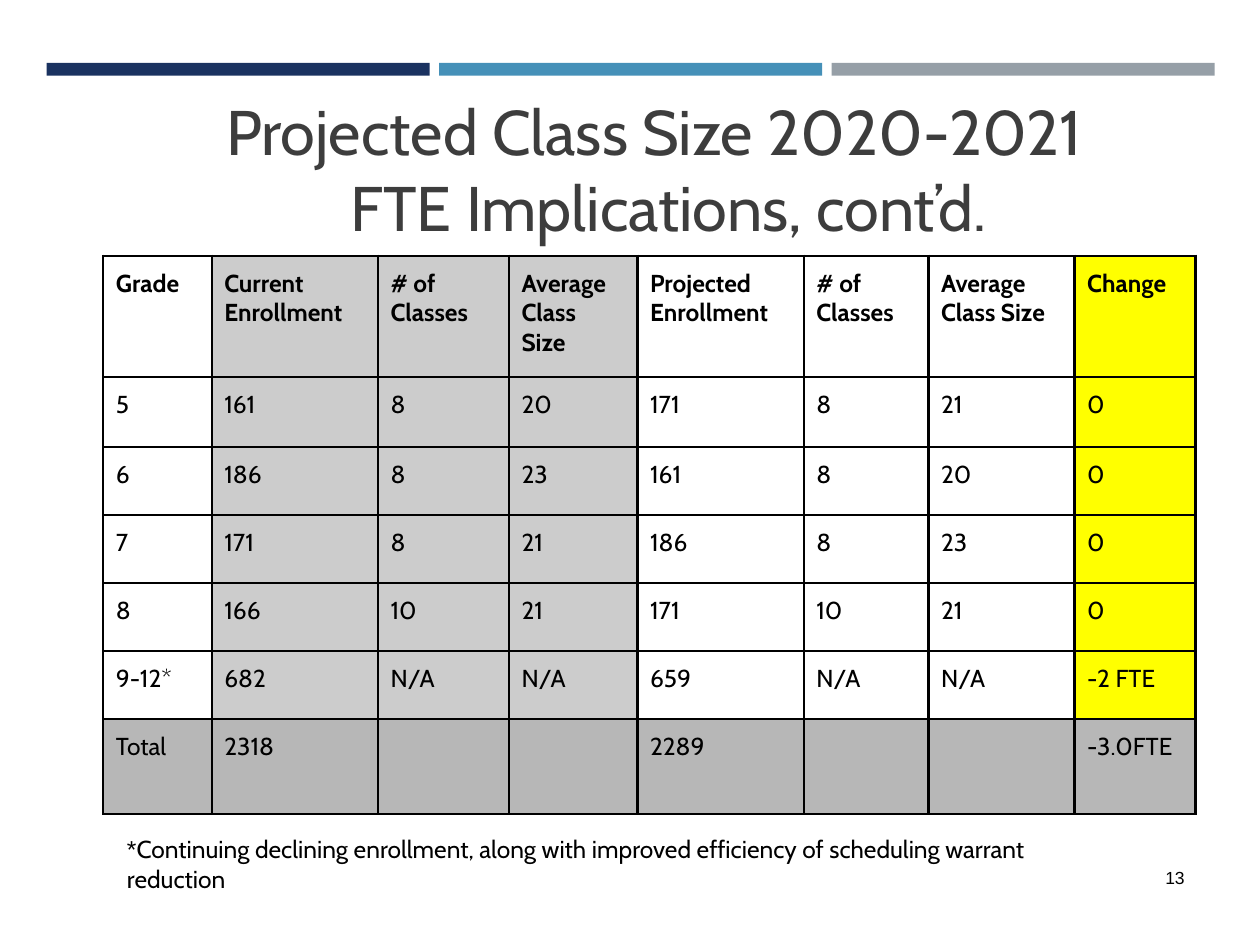
from dataclasses import dataclass
from typing import Optional

from lxml.etree import SubElement
from pptx import Presentation
from pptx.dml.color import RGBColor
from pptx.enum.shapes import MSO_SHAPE as Shape
from pptx.enum.text import MSO_ANCHOR as Anchor, PP_ALIGN as Align
from pptx.oxml.ns import qn
from pptx.util import Inches, Pt

NAVY = RGBColor(0x1A, 0x32, 0x60)
BLUE = RGBColor(0x45, 0x90, 0xB8)
SLATE = RGBColor(0x96, 0x9F, 0xA7)
CHARCOAL = RGBColor(0x3D, 0x3D, 0x3D)
BLACK = RGBColor(0x00, 0x00, 0x00)
LIGHT_GRAY = RGBColor(0xCC, 0xCC, 0xCC)
MID_GRAY = RGBColor(0xB7, 0xB7, 0xB7)
YELLOW = RGBColor(0xFF, 0xFF, 0x00)

SLIDE_WIDTH, SLIDE_HEIGHT = Inches(10), Inches(7.5)
BAR_LEFT, BAR_TOP, BAR_WIDTH, BAR_HEIGHT, BAR_STEP = 0.37, 0.5, 3.04, 0.1, 3.115
TABLE_LEFT, TABLE_TOP = 0.82, 2.03
ROW_HEIGHTS = [0.96, 0.56, 0.54, 0.54, 0.54, 0.54, 0.75]
CELL_MARGIN = Inches(0.1)


@dataclass(frozen=True)
class Column:
    """A table column: its width in inches, body fill and cells from the top."""
    width: float
    fill: Optional[RGBColor]
    cells: tuple[str, ...]


@dataclass(frozen=True)
class TextBlock:
    """A text box; each paragraph is a tuple of (text, font name) runs."""
    left: float
    top: float
    width: float
    height: float
    paragraphs: tuple[tuple[tuple[str, str], ...], ...]
    size: float
    color: RGBColor
    align: Align = Align.LEFT
    anchor: Anchor = Anchor.TOP
    margins: tuple[float, float] = (0.1, 0.1)


COLUMNS = [
    Column(0.86, None, ("Grade", "5", "6", "7", "8", "9-12*", "Total")),
    Column(1.32, LIGHT_GRAY, ("Current Enrollment", "161", "186", "171", "166", "682", "2318")),
    Column(1.04, LIGHT_GRAY, ("# of Classes", "8", "8", "8", "10", "N/A", "")),
    Column(1.02, LIGHT_GRAY, ("Average Class Size", "20", "23", "21", "21", "N/A", "")),
    Column(1.32, None, ("Projected Enrollment", "171", "161", "186", "171", "659", "2289")),
    Column(0.99, None, ("# of Classes", "8", "8", "8", "10", "N/A", "")),
    Column(1.16, None, ("Average Class Size", "21", "20", "23", "21", "N/A", "")),
    Column(0.96, YELLOW, ("Change", "0", "0", "0", "0", "-2 FTE", "-3.0FTE")),
]

TEXT_BLOCKS = [
    TextBlock(1, 0.71, 8.5, 1.25,
              ((("Projected Class Size 2020-2021 ", "Cabin"),),
               ((" FTE Implications, cont’d.", "Cabin"),)),
              36, CHARCOAL, Align.CENTER, Anchor.MIDDLE, (0.07, 0.07)),
    TextBlock(0.91, 6.52, 7.96, 0.54,
              ((("*", "Arial"),
                ("Continuing declining enrollment, along with improved efficiency "
                 "of scheduling warrant reduction", "Cabin")),),
              14, BLACK),
    TextBlock(7.42, 6.83, 2.08, 0.5, ((("13", "Arial"),),),
              10, BLACK, Align.RIGHT, margins=(0.1, 0.05)),
]


def add_bar(slide, index: int, color: RGBColor) -> None:
    """Draw one of the equally spaced bars along the top."""
    bar = slide.shapes.add_shape(
        Shape.RECTANGLE, Inches(BAR_LEFT + index * BAR_STEP), Inches(BAR_TOP),
        Inches(BAR_WIDTH), Inches(BAR_HEIGHT))
    bar.shadow.inherit = False
    bar.fill.solid()
    bar.fill.fore_color.rgb = color
    bar.line.fill.background()


def add_text(slide, block: TextBlock) -> None:
    """Draw a text block with its paragraphs and runs."""
    box = slide.shapes.add_textbox(*map(Inches, (block.left, block.top, block.width, block.height)))
    frame = box.text_frame
    frame.word_wrap = True
    frame.vertical_anchor = block.anchor
    frame.margin_left = frame.margin_right = Inches(block.margins[0])
    frame.margin_top = frame.margin_bottom = Inches(block.margins[1])
    for index, runs in enumerate(block.paragraphs):
        paragraph = frame.add_paragraph() if index else frame.paragraphs[0]
        paragraph.alignment = block.align
        paragraph.font.size = Pt(block.size)
        paragraph.font.color.rgb = block.color
        for text, font_name in runs:
            run = paragraph.add_run()
            run.text = text
            run.font.name = font_name


def set_borders(cell, color: RGBColor, width: float) -> None:
    """Give all four sides of a cell the same solid line."""
    properties = cell._tc.get_or_add_tcPr()
    for side in ("a:lnL", "a:lnR", "a:lnT", "a:lnB"):
        line = SubElement(properties, qn(side), w=str(Pt(width)))
        fill = SubElement(line, qn("a:solidFill"))
        SubElement(fill, qn("a:srgbClr"), val=str(color))


def fill_cell(cell, text: str, fill: Optional[RGBColor], bold: bool) -> None:
    """Set the text, font, margins, borders and fill of a cell."""
    cell.margin_left = cell.margin_right = CELL_MARGIN
    cell.margin_top = cell.margin_bottom = CELL_MARGIN
    cell.text = text
    font = cell.text_frame.paragraphs[0].font
    font.name, font.size, font.bold = "Cabin", Pt(14), bold
    font.color.rgb = BLACK
    set_borders(cell, BLACK, 1.5)
    if fill is None:
        cell.fill.background()
    else:
        cell.fill.solid()
        cell.fill.fore_color.rgb = fill


def add_enrollment_table(slide) -> None:
    """Draw the class size table column by column."""
    table = slide.shapes.add_table(
        len(ROW_HEIGHTS), len(COLUMNS), Inches(TABLE_LEFT), Inches(TABLE_TOP),
        Inches(sum(column.width for column in COLUMNS)), Inches(sum(ROW_HEIGHTS))).table
    table.first_row = table.horz_banding = False
    for row, height in zip(table.rows, ROW_HEIGHTS):
        row.height = Inches(height)
    total_row = len(ROW_HEIGHTS) - 1
    for column_index, column in enumerate(COLUMNS):
        table.columns[column_index].width = Inches(column.width)
        for row_index, text in enumerate(column.cells):
            fill = MID_GRAY if row_index == total_row else column.fill
            fill_cell(table.cell(row_index, column_index), text, fill, row_index == 0)


def main() -> None:
    """Build and save the class size slide."""
    presentation = Presentation()
    presentation.slide_width, presentation.slide_height = SLIDE_WIDTH, SLIDE_HEIGHT
    slide = presentation.slides.add_slide(presentation.slide_layouts[6])
    for index, color in enumerate((NAVY, BLUE, SLATE)):
        add_bar(slide, index, color)
    add_enrollment_table(slide)
    for block in TEXT_BLOCKS:
        add_text(slide, block)
    presentation.save("out.pptx")


if __name__ == "__main__":
    main()
